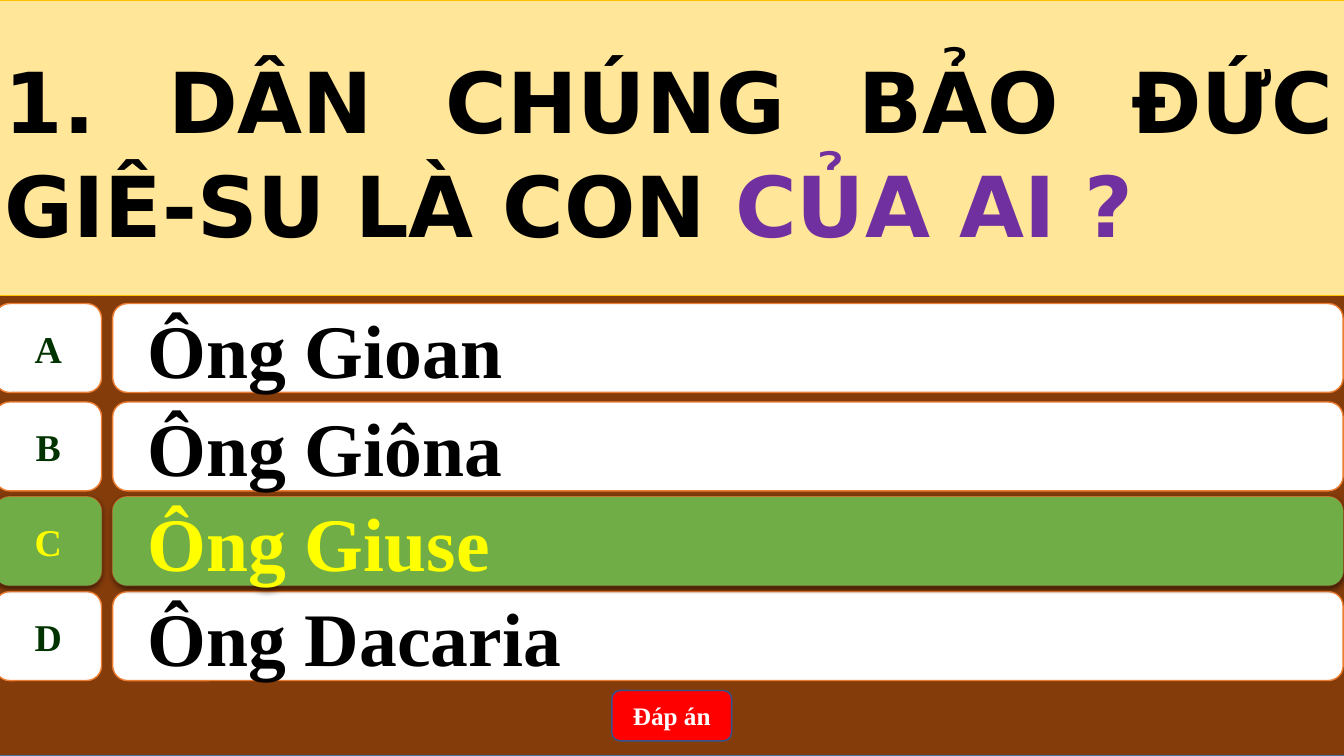
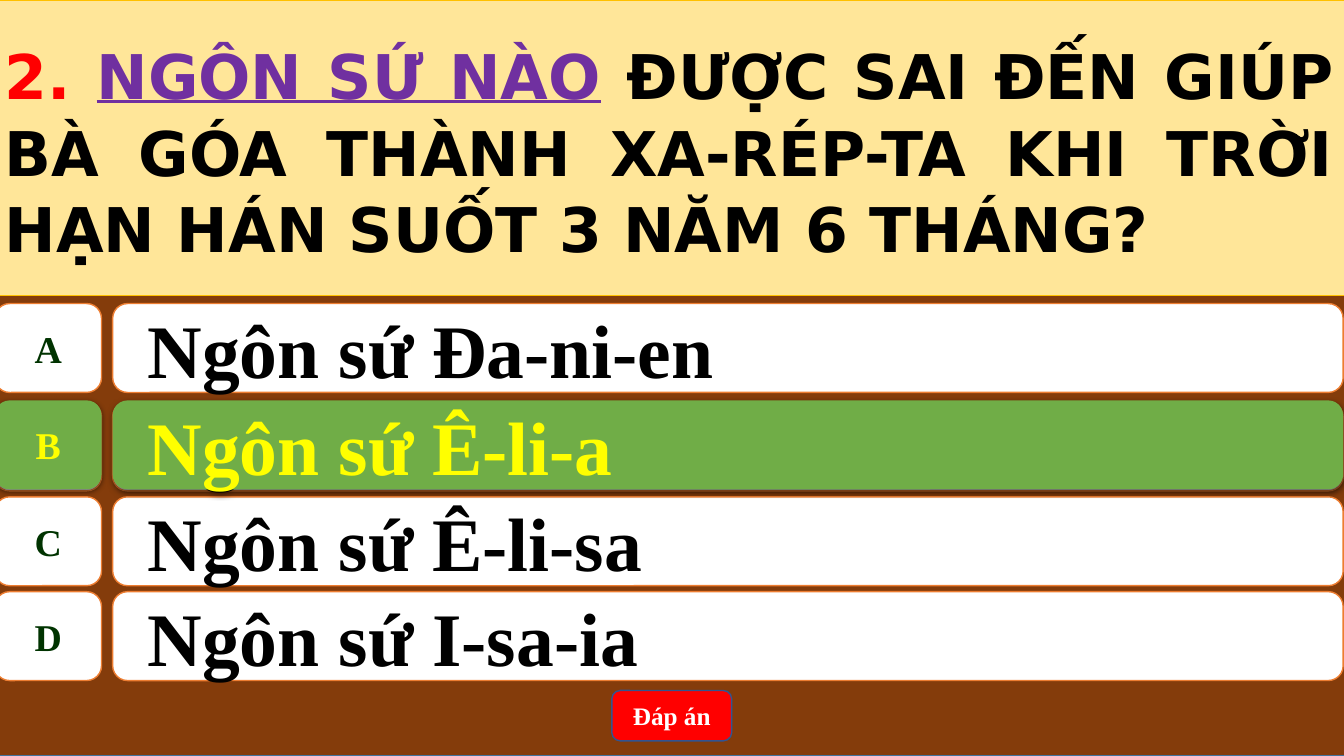
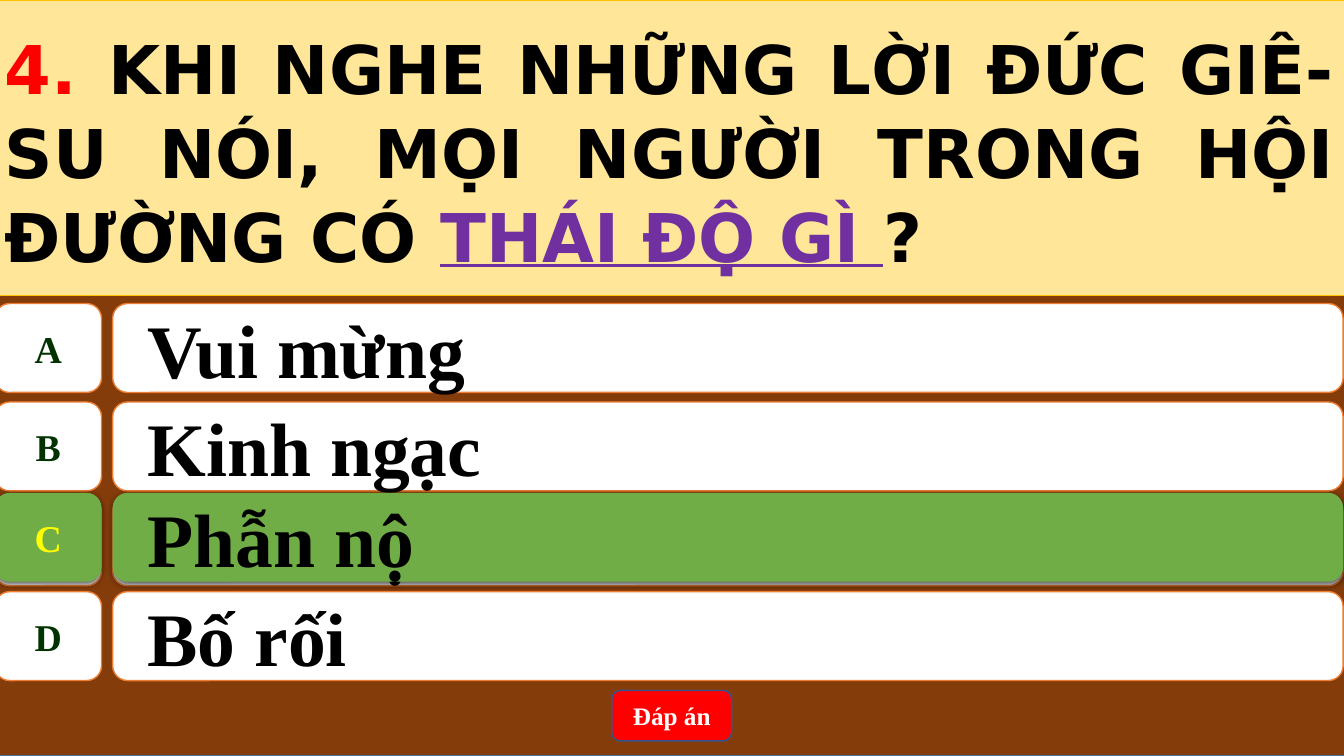
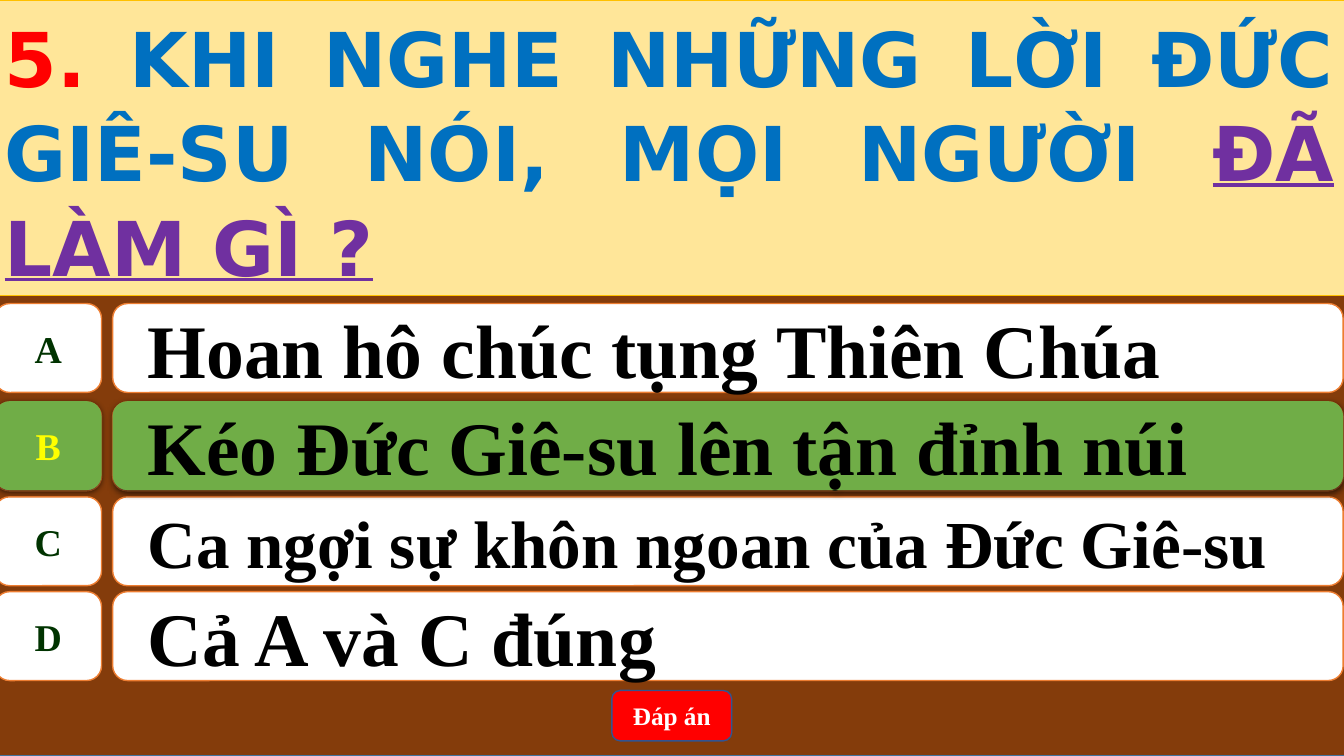
from dataclasses import dataclass

from lxml import etree
from pptx import Presentation
from pptx import util as u
from pptx.dml import color
from pptx.enum import shapes, text
from pptx.oxml import ns

COLORS = {
    "board": "843C0B", "board_edge": "43739E",
    "banner": "FFE699", "banner_edge": "FFC000",
    "card": "FFFFFF", "card_edge": "ED7D31", "letter": "003300",
    "correct": "70AD47", "yellow": "FFFF00",
    "button": "FF0000", "button_edge": "325491",
    "black": "000000", "white": "FFFFFF", "red": "FF0000",
    "purple": "7030A0", "blue": "0070C0",
}
SERIF = "Times New Roman"
SANS = "DejaVu Sans"
LEFT, FULL_WIDTH = -0.13, 34.01
ROW_TOPS = {"A": 7.65, "B": 10.13, "C": 12.52, "D": 14.91}
ROW_HEIGHT = 2.24
SHAPE = shapes.MSO_SHAPE
ALIGN = text.PP_ALIGN


@dataclass
class Question:
    size: int
    spans: list
    answers: list
    correct: str
    correct_shift: float = 0
    correct_color: str = "black"
    small: str = ""


QUESTIONS = [
    Question(
        60,
        [("1. DÂN CHÚNG BẢO ĐỨC GIÊ-SU LÀ CON ", "black", False),
         ("CỦA AI ?", "purple", False)],
        ["Ông Gioan", "Ông Giôna", "Ông Giuse", "Ông Dacaria"],
        "C", correct_color="yellow"),
    Question(
        44,
        [("2. ", "red", False), ("NGÔN SỨ NÀO", "purple", True),
         (" ĐƯỢC SAI ĐẾN GIÚP BÀ GÓA THÀNH XA-RÉP-TA KHI TRỜI HẠN HÁN "
          "SUỐT 3 NĂM 6 THÁNG?", "black", False)],
        ["Ngôn sứ Đa-ni-en", "Ngôn sứ Ê-li-a", "Ngôn sứ Ê-li-sa", "Ngôn sứ I-sa-ia"],
        "B", correct_shift=-0.04, correct_color="yellow"),
    Question(
        48,
        [("4. ", "red", False),
         ("KHI NGHE NHỮNG LỜI ĐỨC GIÊ-SU NÓI, MỌI NGƯỜI TRONG HỘI ĐƯỜNG CÓ ",
          "black", False),
         ("THÁI ĐỘ GÌ ", "purple", True), ("?", "black", False)],
        ["Vui mừng", "Kinh ngạc", "Phẫn nộ", "Bố rối"],
        "C", correct_shift=-0.1),
    Question(
        54,
        [("5. ", "red", False),
         ("KHI NGHE NHỮNG LỜI ĐỨC GIÊ-SU NÓI, MỌI NGƯỜI ", "blue", False),
         ("ĐÃ LÀM GÌ ?", "purple", True)],
        ["Hoan hô chúc tụng Thiên Chúa", "Kéo Đức Giê-su lên tận đỉnh núi",
         "Ca ngợi sự khôn ngoan của Đức Giê-su", "Cả A và C đúng"],
        "B", correct_shift=-0.02, small="C"),
]


def rgb(name):
    return color.RGBColor.from_string(COLORS[name])


def add_box(parent, kind, place, fill, edge=None, edge_width=1):
    box = parent.shapes.add_shape(kind, *(u.Cm(length) for length in place))
    box.shadow.inherit = False
    box.fill.solid()
    box.fill.fore_color.rgb = rgb(fill)
    if edge:
        box.line.color.rgb = rgb(edge)
        box.line.width = u.Pt(edge_width)
    else:
        box.line.fill.background()
    return box


def start_text(box, font, size, align):
    frame = box.text_frame
    frame.word_wrap = True
    frame.vertical_anchor = text.MSO_ANCHOR.MIDDLE
    para = frame.paragraphs[0]
    para.alignment = align
    para.font.name = font
    para.font.size = u.Pt(size)
    para.font.bold = True
    return para


def write(box, words, size, ink, align=ALIGN.CENTER):
    para = start_text(box, SERIF, size, align)
    para.font.color.rgb = rgb(ink)
    para.add_run().text = words


def add_shadow(box):
    effects = box.element.spPr.find(ns.qn("a:effectLst"))
    shadow = etree.SubElement(
        effects, ns.qn("a:outerShdw"), blurRad=str(u.Pt(4.5)),
        dist=str(u.Pt(1.5)), dir="5400000", algn="ctr", rotWithShape="0")
    tint = etree.SubElement(shadow, ns.qn("a:srgbClr"), val=COLORS["black"])
    etree.SubElement(tint, ns.qn("a:alpha"), val="63000")


def add_row(page, letter, answer, top, size=54, ink="black", letter_ink="letter",
            fill="card", edge="card_edge"):
    row = page.shapes.add_group_shape()
    label = add_box(row, SHAPE.FLOWCHART_ALTERNATE_PROCESS,
                    (LEFT, top, 2.69, ROW_HEIGHT), fill, edge)
    write(label, letter, 27, letter_ink)
    label.text_frame.word_wrap = False
    card = add_box(row, SHAPE.ROUNDED_RECTANGLE,
                   (2.84, top, 31.01, ROW_HEIGHT), fill, edge)
    write(card, answer, size, ink, ALIGN.LEFT)
    card.text_frame.margin_left = u.Cm(0.77)
    return label, card


def add_banner(page, question):
    banner = add_box(page, SHAPE.RECTANGLE, (LEFT, 0, FULL_WIDTH, 7.44),
                     "banner", "banner_edge", 0.5)
    para = start_text(banner, SANS, question.size, ALIGN.JUSTIFY)
    para.line_spacing = 1.04
    banner.text_frame.margin_top = u.Cm(0.24)
    for words, ink, underlined in question.spans:
        span = para.add_run()
        span.text = words
        span.font.color.rgb = rgb(ink)
        if underlined:
            span.font.underline = True


def add_button(page):
    button = add_box(page, SHAPE.ROUNDED_RECTANGLE, (15.42, 17.4, 3.02, 1.27),
                     "button", "button_edge")
    write(button, "Đáp án", 18, "white")


def add_question(deck, question):
    page = deck.slides.add_slide(deck.slide_layouts[6])
    add_box(page, SHAPE.RECTANGLE, (LEFT, 0, FULL_WIDTH, 19.05), "board", "board_edge")
    answers = dict(zip(ROW_TOPS, question.answers))
    for letter, top in ROW_TOPS.items():
        size = 48 if letter == question.small else 54
        add_row(page, letter, answers[letter], top, size)
    add_button(page)
    add_banner(page, question)
    letter = question.correct
    correct_row = add_row(
        page, letter, answers[letter], ROW_TOPS[letter] + question.correct_shift,
        ink=question.correct_color, letter_ink="yellow", fill="correct", edge=None)
    for box in correct_row:
        add_shadow(box)


def main():
    deck = Presentation()
    deck.slide_width, deck.slide_height = u.Cm(33.87), u.Cm(19.05)
    for question in QUESTIONS:
        add_question(deck, question)
    deck.save("out.pptx")


if __name__ == "__main__":
    main()
